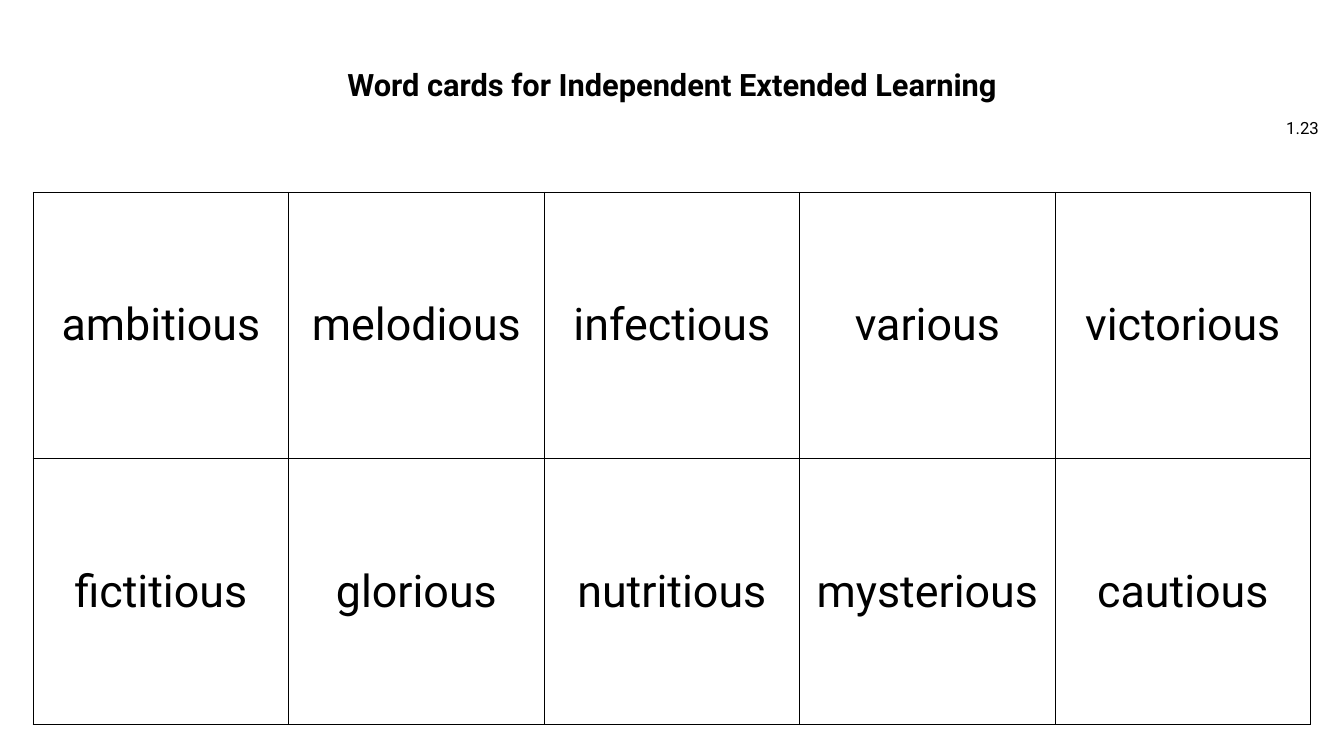
from dataclasses import dataclass

from lxml.etree import SubElement
from pptx import Presentation
from pptx.dml.color import RGBColor
from pptx.enum.text import MSO_ANCHOR as Anchor, MSO_AUTO_SIZE as AutoSize, PP_ALIGN as Align
from pptx.oxml.ns import qn
from pptx.util import Inches, Pt


@dataclass(frozen=True)
class Theme:
    font: str = "Roboto"
    ink: str = "000000"
    paper: str = "FFFFFF"
    title_size: int = 22
    label_size: int = 12
    card_size: int = 32
    border_width: int = 1


WORD_CARDS = [
    ["ambitious", "melodious", "infectious", "various", "victorious"],
    ["fictitious", "glorious", "nutritious", "mysterious", "cautious"],
]


def apply_format(target, values):
    for name, value in values.items():
        setattr(target, name, value)


class CardSlide:
    def __init__(self, deck, theme):
        self.theme = theme
        self.page = deck.slides.add_slide(deck.slide_layouts[5])
        self.page.background.fill.solid()
        self.page.background.fill.fore_color.rgb = RGBColor.from_string(theme.paper)

    def set_text(self, frame, text, size, align, bold=False, spacing=1.0):
        para = frame.paragraphs[0]
        apply_format(para, {"alignment": align, "line_spacing": spacing, "space_before": Pt(0)})
        span = para.add_run()
        span.text = text
        apply_format(span.font, {"name": self.theme.font, "size": Pt(size), "bold": bold})
        span.font.color.rgb = RGBColor.from_string(self.theme.ink)

    def place(self, box, left, top, width, height, anchor):
        apply_format(box, {
            "left": Inches(left), "top": Inches(top),
            "width": Inches(width), "height": Inches(height),
        })
        apply_format(box.text_frame, {
            "word_wrap": True, "auto_size": AutoSize.NONE, "vertical_anchor": anchor,
        })

    def title(self, text, *bounds):
        box = self.page.shapes.title
        self.place(box, *bounds, Anchor.TOP)
        self.set_text(box.text_frame, text, self.theme.title_size, Align.CENTER, True, 0.9)

    def label(self, text, *bounds):
        box = self.page.shapes.add_textbox(0, 0, 0, 0)
        self.place(box, *bounds, Anchor.MIDDLE)
        self.set_text(box.text_frame, text, self.theme.label_size, Align.RIGHT)

    def border(self, cell):
        properties = cell._tc.get_or_add_tcPr()
        for side in ("a:lnL", "a:lnR", "a:lnT", "a:lnB"):
            line = SubElement(properties, qn(side), w=str(Pt(self.theme.border_width)))
            fill = SubElement(line, qn("a:solidFill"))
            SubElement(fill, qn("a:srgbClr"), val=self.theme.ink)

    def cards(self, rows, left, top, width, height):
        table = self.page.shapes.add_table(
            len(rows), len(rows[0]),
            Inches(left), Inches(top), Inches(width), Inches(height),
        ).table
        apply_format(table, {"first_row": False, "horz_banding": False})
        for row_index, words in enumerate(rows):
            for column_index, word in enumerate(words):
                cell = table.cell(row_index, column_index)
                self.border(cell)
                cell.fill.background()
                cell.vertical_anchor = Anchor.MIDDLE
                self.set_text(cell.text_frame, word, self.theme.card_size, Align.CENTER)


def main():
    deck = Presentation()
    apply_format(deck, {"slide_width": Inches(13.33), "slide_height": Inches(7.5)})
    slide = CardSlide(deck, Theme())
    slide.title("Word cards for Independent Extended Learning", 2.31, 0.64, 8.71, 0.35)
    slide.label("1.23", 12.55, 1.07, 0.63, 0.4)
    slide.cards(WORD_CARDS, 0.33, 1.91, 12.67, 5.28)
    deck.save("out.pptx")


if __name__ == "__main__":
    main()
